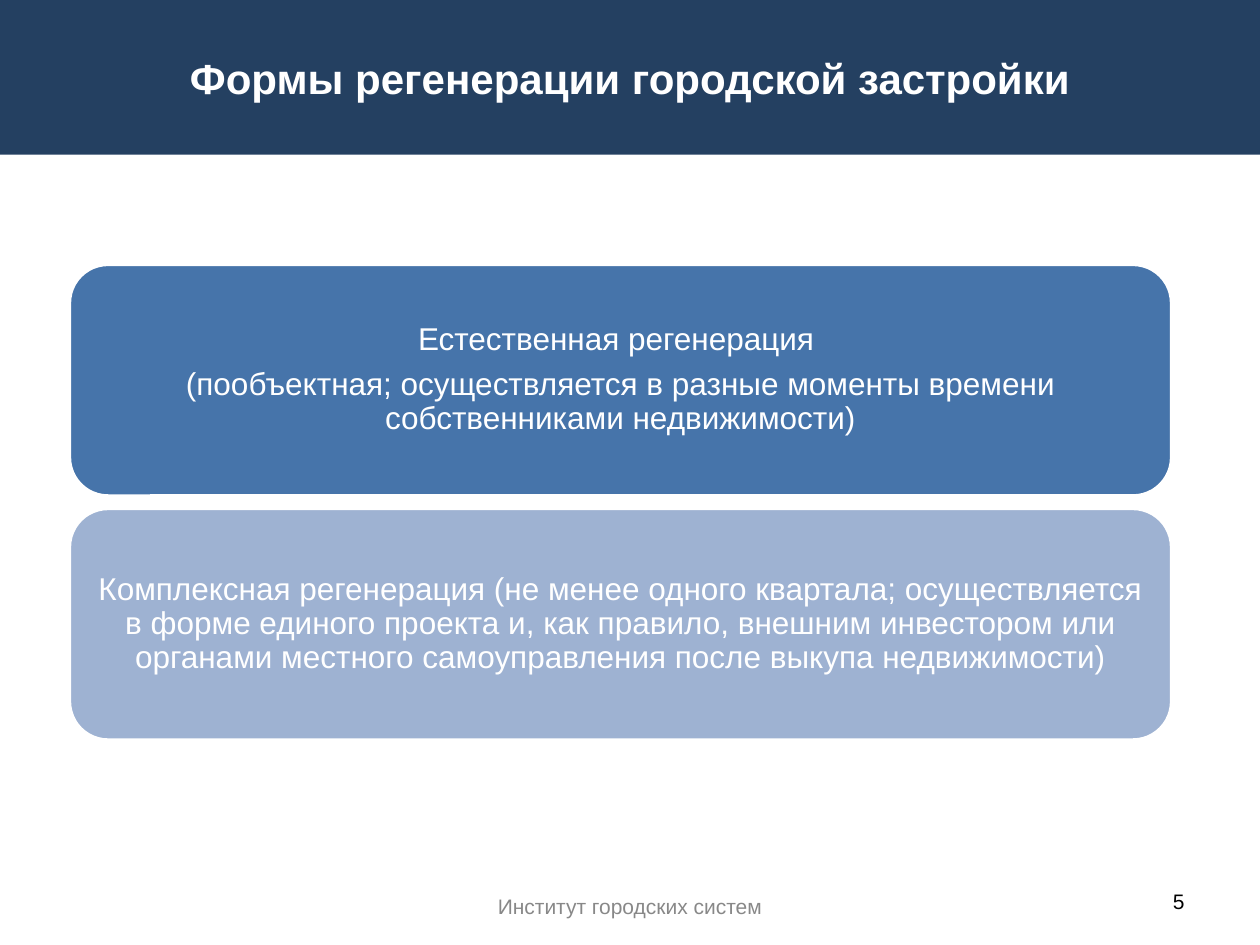
from pptx import Presentation
from pptx.dml.color import RGBColor
from pptx.enum import shapes, text
from pptx.util import Cm, Pt

FONT = "Arial"
COLORS = {
    "banner": "244061",
    "natural": "4674AA",
    "complex": "9EB2D2",
    "white": "FFFFFF",
    "black": "000000",
    "footer": "888888",
}
TITLE = "Формы регенерации городской застройки"
FORMS = [
    ("natural", [
        "Естественная регенерация ",
        "(пообъектная; осуществляется в разные моменты времени "
        "собственниками недвижимости)",
    ]),
    ("complex", [
        "Комплексная регенерация (не менее одного квартала; осуществляется "
        "в форме единого проекта и, как правило, внешним инвестором или "
        "органами местного самоуправления после выкупа недвижимости)",
    ]),
]
CARD_LEFT, CARD_TOP, CARD_WIDTH, CARD_HEIGHT = 1.4, 5.33, 22.22, 4.67
CARD_STEP = 4.92


def rgb(name):
    return RGBColor.from_string(COLORS[name])


def paint(sp, color):
    sp.fill.solid()
    sp.fill.fore_color.rgb = rgb(color)


def write(tf, lines, size, color, align=text.PP_ALIGN.CENTER, bold=False):
    """Fill a text frame with one paragraph per line and return the paragraphs."""
    tf.word_wrap = True
    tf.auto_size = text.MSO_AUTO_SIZE.NONE
    tf.vertical_anchor = text.MSO_ANCHOR.MIDDLE
    tf.text = "\n".join(lines)
    for p in tf.paragraphs:
        p.alignment = align
        p.font.name = FONT
        p.font.size = Pt(size)
        p.font.bold = bold
        p.font.color.rgb = rgb(color)
    return tf.paragraphs


def add_title(s):
    sp = s.shapes.title
    sp.left, sp.top, sp.width, sp.height = Cm(0), Cm(0), Cm(25.4), Cm(3.12)
    paint(sp, "banner")
    write(sp.text_frame, [TITLE], 24, "white", bold=True)


def add_card(s, top, color, lines):
    sp = s.shapes.add_shape(
        shapes.MSO_SHAPE.ROUNDED_RECTANGLE,
        Cm(CARD_LEFT), Cm(top), Cm(CARD_WIDTH), Cm(CARD_HEIGHT))
    sp.shadow.inherit = False
    paint(sp, color)
    sp.line.color.rgb = rgb("white")
    sp.line.width = Pt(2)
    tf = sp.text_frame
    tf.margin_left = tf.margin_right = Cm(0.17)
    tf.margin_top = tf.margin_bottom = Cm(0.1)
    for i, p in enumerate(write(tf, lines, 18, "white")):
        p.line_spacing = 0.9
        p.space_before = Pt(6.3 if i else 0)


def add_label(s, left, top, line, color, align):
    box = s.shapes.add_textbox(Cm(left), Cm(top), Cm(5.92), Cm(1.02))
    write(box.text_frame, [line], 12, color, align)
    box.text_frame.word_wrap = False


def main():
    prs = Presentation()
    prs.slide_width, prs.slide_height = Cm(25.4), Cm(19.05)
    s = prs.slides.add_slide(prs.slide_layouts[5])
    add_title(s)
    for i, (color, lines) in enumerate(FORMS):
        add_card(s, CARD_TOP + i * CARD_STEP, color, lines)
    add_label(s, 9.74, 17.75, "Институт городских систем", "footer",
              text.PP_ALIGN.CENTER)
    add_label(s, 18.21, 17.65, "5", "black", text.PP_ALIGN.RIGHT)
    prs.save("out.pptx")


if __name__ == "__main__":
    main()
